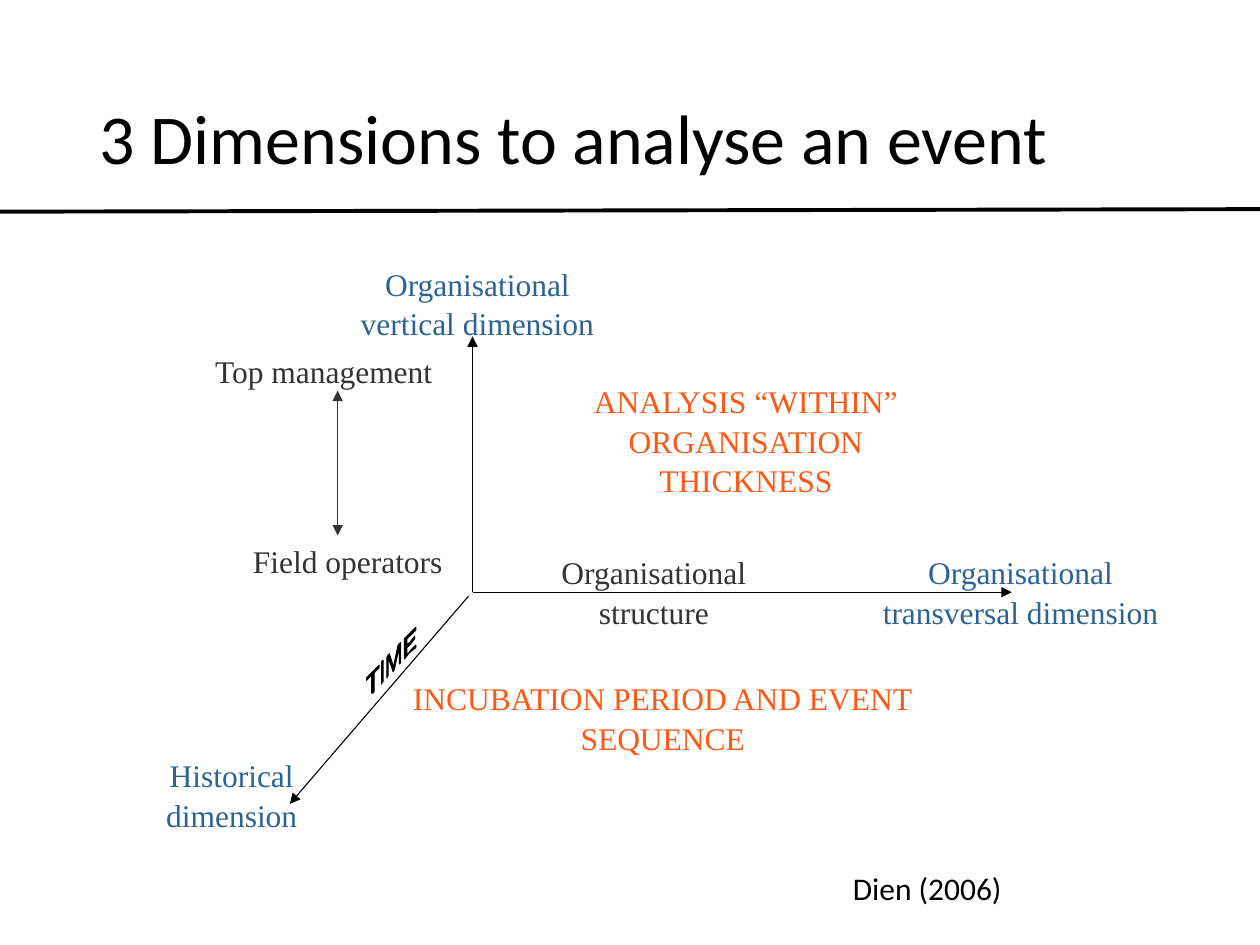
"""Build the slide on the three dimensions used to analyse an event."""
from dataclasses import dataclass

import pptx
import pptx.dml.color
import pptx.enum.shapes
import pptx.enum.text
import pptx.oxml.ns
import pptx.slide
import pptx.text.text
import pptx.util
from lxml import etree

EMU_PER_PX = 9144
COLORS = {"ink": "000000", "dimension": "2B6396", "analysis": "FD5814", "level": "333333"}
ALIGN = pptx.enum.text.PP_ALIGN
ANCHOR = pptx.enum.text.MSO_ANCHOR


@dataclass(frozen=True)
class Label:
    center: int
    top: int
    width: int
    lines: tuple[str, ...]
    color: str


@dataclass(frozen=True)
class Line:
    start: tuple[int, int]
    end: tuple[int, int]
    weight: float
    color: str = "ink"
    head: bool = False
    tail: bool = True


LABELS = (
    Label(379, 210, 186, ("Organisational", "vertical dimension"), "dimension"),
    Label(592, 303, 250, ("ANALYSIS “WITHIN”", "ORGANISATION", "THICKNESS"), "analysis"),
    Label(184, 600, 106, ("Historical", "dimension"), "dimension"),
    Label(810, 439, 220, ("Organisational", "transversal dimension"), "dimension"),
    Label(526, 539, 408, ("INCUBATION PERIOD AND EVENT", "SEQUENCE"), "analysis"),
    Label(257, 279, 174, ("Top management",), "level"),
    Label(276, 430, 152, ("Field operators",), "level"),
    Label(519, 439, 154, ("Organisational", "structure"), "level"),
)

LINES = (
    Line((0, 168), (1000, 166), 2.25, tail=False),
    Line((375, 470), (803, 470), 0.63),
    Line((375, 470), (375, 267), 0.63),
    Line((372, 473), (230, 638), 0.63),
    Line((268, 310), (268, 425), 0.88, "level", head=True),
)

TIME_LETTERS = (
    ((295, 550), (295, 536), (293, 538), (291, 540), (291, 538), (301, 528),
     (301, 530), (299, 532), (297, 534), (297, 549), (296, 550)),
    ((303, 543), (303, 525), (304, 524), (304, 541), (303, 542)),
    ((307, 538), (307, 522), (308, 520), (309, 519), (312, 528), (313, 529),
     (313, 526), (316, 512), (317, 511), (318, 510), (318, 526), (317, 527),
     (317, 514), (315, 522), (313, 531), (312, 533), (310, 527), (308, 522),
     (308, 536)),
    ((321, 523), (321, 507), (330, 498), (330, 500), (326, 504), (323, 507),
     (323, 512), (326, 509), (329, 505), (329, 507), (326, 511), (323, 514),
     (323, 520), (326, 516), (330, 512), (330, 514), (325, 518)),
)


def px(length: int) -> pptx.util.Emu:
    """Turn px into EMU."""
    return pptx.util.Emu(length * EMU_PER_PX)


def rgb(color: str) -> pptx.dml.color.RGBColor:
    """Look up a named colour."""
    return pptx.dml.color.RGBColor.from_string(COLORS[color])


def write(frame: pptx.text.text.TextFrame, *lines: str, size: int = 18,
          font: str = "Calibri", color: str = "ink", align: ALIGN = ALIGN.LEFT,
          anchor: ANCHOR = ANCHOR.TOP, margin: int | None = None, wrap: bool = True,
          spacing: float = 1.0, gap: float = 0) -> None:
    """Fill a text frame with one formatted paragraph per line."""
    frame.word_wrap = wrap
    frame.auto_size = pptx.enum.text.MSO_AUTO_SIZE.NONE
    frame.vertical_anchor = anchor
    if margin is not None:
        frame.margin_left = frame.margin_right = px(margin)
        frame.margin_top = frame.margin_bottom = px(margin)
    frame.text = "\n".join(lines)
    for paragraph in frame.paragraphs:
        paragraph.alignment = align
        paragraph.line_spacing = spacing
        paragraph.space_after = pptx.util.Pt(gap)
        paragraph.font.size = pptx.util.Pt(size)
        paragraph.font.name = font
        paragraph.font.color.rgb = rgb(color)


def draw_label(slide: pptx.slide.Slide, label: Label) -> None:
    """Draw a centred label."""
    box = slide.shapes.add_textbox(px(label.center - label.width // 2), px(label.top),
                                   px(label.width), px(30 * len(label.lines)))
    write(box.text_frame, *label.lines, font="Times New Roman", color=label.color,
          align=ALIGN.CENTER, margin=0, wrap=False, gap=1.2)


def draw_line(slide: pptx.slide.Slide, line: Line) -> None:
    """Draw a straight line with its arrowheads."""
    connector = slide.shapes.add_connector(
        pptx.enum.shapes.MSO_CONNECTOR.STRAIGHT,
        *map(px, line.start), *map(px, line.end))
    connector.line.color.rgb = rgb(line.color)
    connector.line.width = pptx.util.Pt(line.weight)
    properties = connector.element.spPr
    outline = properties.find(pptx.oxml.ns.qn("a:ln"))
    for tag, shown in (("a:headEnd", line.head), ("a:tailEnd", line.tail)):
        if shown:
            etree.SubElement(outline, pptx.oxml.ns.qn(tag), type="triangle")
    etree.SubElement(properties, pptx.oxml.ns.qn("a:effectLst"))


def draw_letter(slide: pptx.slide.Slide, points: tuple[tuple[int, int], ...]) -> None:
    """Draw one slanted letter as a closed outline."""
    builder = slide.shapes.build_freeform(*points[0], scale=EMU_PER_PX)
    builder.add_line_segments(points[1:], close=True)
    letter = builder.convert_to_shape()
    letter.shadow.inherit = False
    letter.fill.solid()
    letter.fill.fore_color.rgb = rgb("ink")
    letter.line.color.rgb = rgb("ink")
    letter.line.width = pptx.util.Pt(0.63)


def main() -> None:
    """Build and save the slide."""
    deck = pptx.Presentation()
    deck.slide_width, deck.slide_height = px(1000), px(750)
    slide = deck.slides.add_slide(deck.slide_layouts[5])

    heading = slide.shapes.title
    heading.left, heading.top = px(69), px(40)
    heading.width, heading.height = px(862), px(145)
    write(heading.text_frame, "3 Dimensions to analyse an event", size=40,
          anchor=ANCHOR.MIDDLE, spacing=0.9)

    for line in LINES:
        draw_line(slide, line)
    for points in TIME_LETTERS:
        draw_letter(slide, points)
    for label in LABELS:
        draw_label(slide, label)

    citation = slide.shapes.add_textbox(px(667), px(685), px(325), px(40))
    write(citation.text_frame, "Dien (2006)")
    deck.save("out.pptx")


if __name__ == "__main__":
    main()
